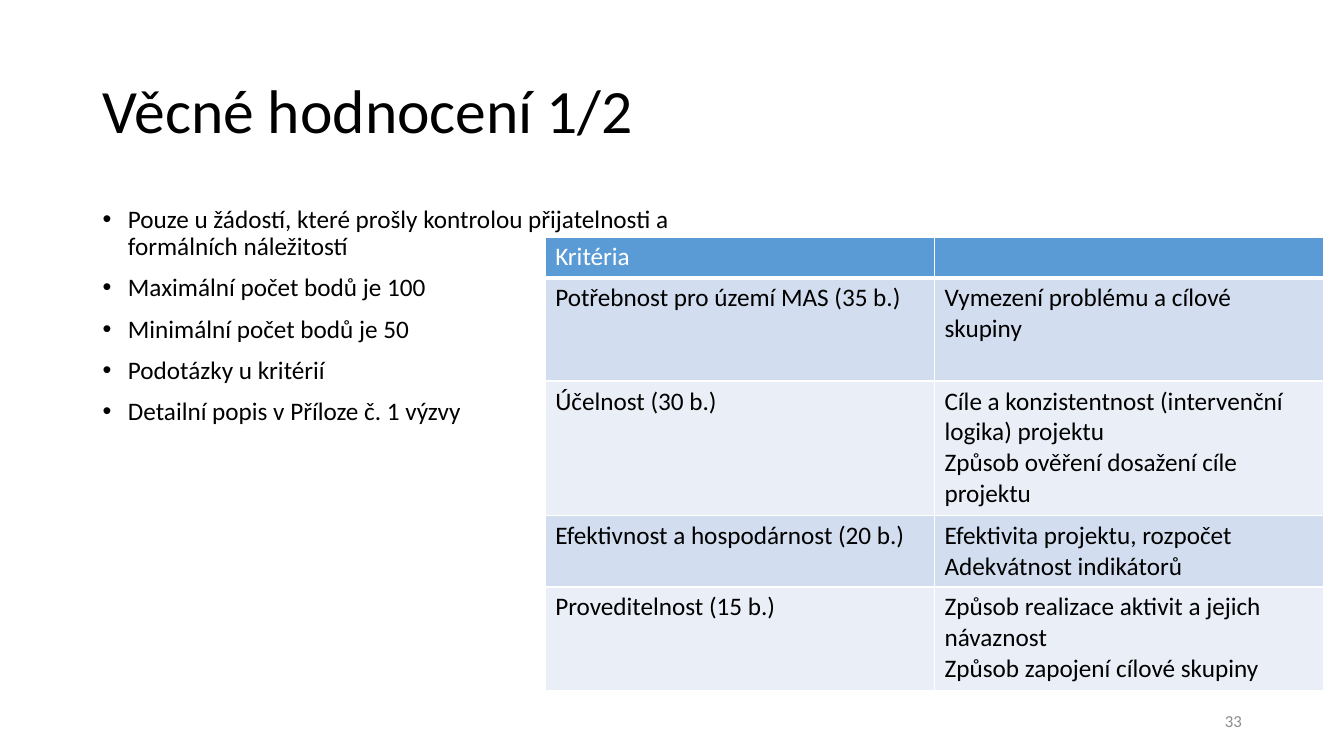
import lxml.etree
import pptx
import pptx.dml.color
import pptx.enum.text
import pptx.oxml.ns
import pptx.util
from pptx.util import Cm, Pt

FONT = "Calibri"
BULLETS = [
    "Pouze u žádostí, které prošly kontrolou přijatelnosti a formálních náležitostí",
    "Maximální počet bodů je 100",
    "Minimální počet bodů je 50",
    "Podotázky u kritérií",
    "Detailní popis v Příloze č. 1 výzvy",
]
# Row height in cm, criterion, lines of detail
CRITERIA = [
    (1.03, "Kritéria", []),
    (2.6, "Potřebnost pro území MAS (35 b.)", ["Vymezení problému a cílové skupiny"]),
    (3.39, "Účelnost (30 b.)", ["Cíle a konzistentnost (intervenční logika) projektu",
                                "Způsob ověření dosažení cíle projektu"]),
    (1.8, "Efektivnost a hospodárnost (20 b.)", ["Efektivita projektu, rozpočet",
                                                 "Adekvátnost indikátorů"]),
    (2.6, "Proveditelnost (15 b.)", ["Způsob realizace aktivit a jejich návaznost",
                                     "Způsob zapojení cílové skupiny"]),
]


def rgb(value):
    return pptx.dml.color.RGBColor.from_string(value)


def sub(parent, tag, **attrs):
    return lxml.etree.SubElement(parent, pptx.oxml.ns.qn(tag), attrs)


def place(shape, left, top, width, height):
    shape.left, shape.top = Cm(left), Cm(top)
    shape.width, shape.height = Cm(width), Cm(height)


def write(tf, lines, size, color="000000", align=pptx.enum.text.PP_ALIGN.LEFT):
    """Write one paragraph per line and return the paragraphs."""
    tf.word_wrap = True
    for i, line in enumerate(lines):
        p = tf.paragraphs[0] if i == 0 else tf.add_paragraph()
        p.alignment = align
        r = p.add_run()
        r.text = line
        r.font.name, r.font.size = FONT, Pt(size)
        r.font.color.rgb = rgb(color)
    return tf.paragraphs


def add_title(s, text):
    title = s.shapes.title
    place(title, 2.33, 1.01, 29.21, 3.68)
    tf = title.text_frame
    tf.auto_size = pptx.enum.text.MSO_AUTO_SIZE.NONE
    tf.vertical_anchor = pptx.enum.text.MSO_ANCHOR.MIDDLE
    write(tf, [text], 44)[0].line_spacing = 0.9


def add_bullets(s, lines):
    body = s.placeholders[1]
    place(body, 2.33, 5.08, 29.21, 12.09)
    tf = body.text_frame
    tf.auto_size = pptx.enum.text.MSO_AUTO_SIZE.NONE
    tf._txBody.bodyPr.set("numCol", "2")
    for p in write(tf, lines, 18):
        p.line_spacing = 0.9
        p.space_before = Pt(10)
        pPr = p._p.get_or_add_pPr()
        pPr.set("marL", str(Cm(0.64)))
        pPr.set("indent", str(-Cm(0.64)))
        sub(pPr, "a:buFont", typeface="Arial")
        sub(pPr, "a:buChar", char="•")


def style_cell(cell, fill, bottom):
    """Give a cell white borders and a plain fill."""
    tcPr = cell._tc.get_or_add_tcPr()
    for side, width in (("L", 1), ("R", 1), ("T", 1), ("B", bottom)):
        ln = sub(tcPr, "a:ln" + side, w=str(Pt(width)))
        sub(sub(ln, "a:solidFill"), "a:srgbClr", val="FFFFFF")
    cell.fill.solid()
    cell.fill.fore_color.rgb = rgb(fill)


def add_criteria(s, rows):
    height = sum(row[0] for row in rows)
    table = s.shapes.add_table(len(rows), 2, Cm(13.74), Cm(5.97),
                               Cm(19.62), Cm(height)).table
    for i, (row_height, criterion, details) in enumerate(rows):
        header = i == 0
        table.rows[i].height = Cm(row_height)
        fill = "5B9BD5" if header else ("EAEFF7", "D2DEEF")[i % 2]
        for j, lines in enumerate(([criterion], details)):
            cell = table.cell(i, j)
            style_cell(cell, fill, 3 if header else 1)
            write(cell.text_frame, lines, 18, "FFFFFF" if header else "000000")


def add_page_number(s, number):
    tf = s.shapes.add_textbox(Cm(23.93), Cm(17.65), Cm(7.62), Cm(1.02)).text_frame
    tf.vertical_anchor = pptx.enum.text.MSO_ANCHOR.MIDDLE
    write(tf, [number], 12, "8C8C8C", pptx.enum.text.PP_ALIGN.RIGHT)


def main():
    prs = pptx.Presentation()
    prs.slide_width, prs.slide_height = Cm(33.87), Cm(19.05)
    s = prs.slides.add_slide(prs.slide_layouts[1])
    add_title(s, "Věcné hodnocení 1/2")
    add_bullets(s, BULLETS)
    add_page_number(s, "33")
    add_criteria(s, CRITERIA)
    prs.save("out.pptx")


if __name__ == "__main__":
    main()
